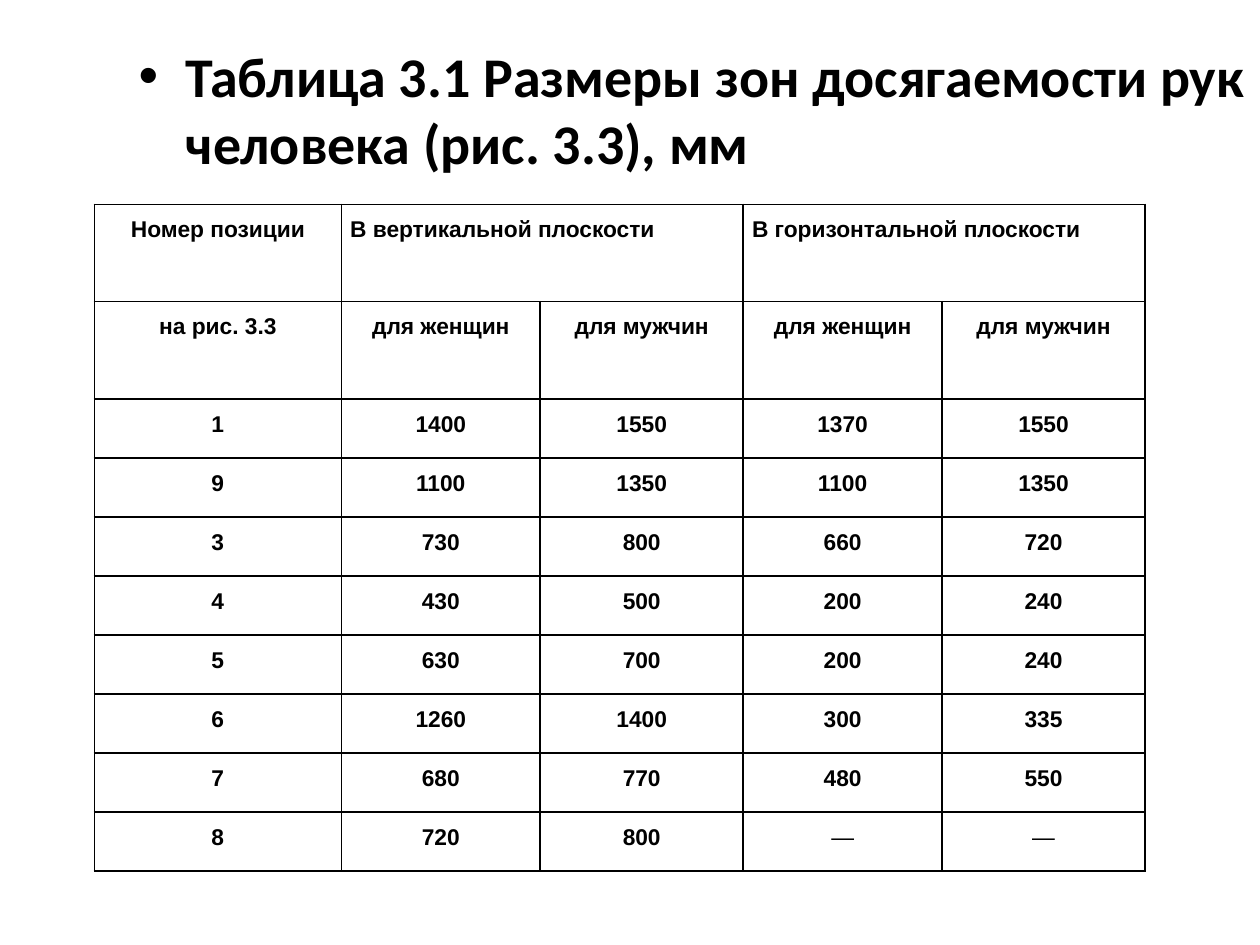
"""Build a slide with a table of arm reach zones."""
from lxml import etree
from pptx import Presentation
from pptx.dml.color import RGBColor
from pptx.enum.text import PP_ALIGN
from pptx.oxml.ns import qn
from pptx.util import Cm, Pt

LEFT, CENTER = PP_ALIGN.LEFT, PP_ALIGN.CENTER
BLACK = RGBColor(0, 0, 0)
WHITE = RGBColor(255, 255, 255)

TITLE = "Таблица 3.1 Размеры зон досягаемости рук человека (рис. 3.3), мм"
DASH = "—"
HEADS = [
    ["Номер позиции", "В вертикальной плоскости", "", "В горизонтальной плоскости", ""],
    ["на рис. 3.3"] + ["для женщин", "для мужчин"] * 2,
]
ZONES = [
    [1, 1400, 1550, 1370, 1550],
    [9, 1100, 1350, 1100, 1350],
    [3, 730, 800, 660, 720],
    [4, 430, 500, 200, 240],
    [5, 630, 700, 200, 240],
    [6, 1260, 1400, 300, 335],
    [7, 680, 770, 480, 550],
    [8, 720, 800, DASH, DASH],
]
SPANS = [(0, 1), (0, 3)]
WIDTHS = [4.98] + [4.01, 4.09] * 2
HEIGHTS = [1.96] * len(HEADS) + [1.19] * len(ZONES)


def assign(item, values):
    """Set each named attribute of an item."""
    for name, value in values.items():
        setattr(item, name, value)


class Page:
    """Style and current slide, with a method for each kind of element."""

    head = {"name": "Calibri", "size": Pt(32), "bold": True}
    body = {"name": "Arial", "size": Pt(13), "bold": True}
    inset = {f"margin_{side}": Cm(0.18) for side in ("left", "right", "top", "bottom")}
    plain = {"first_row": False, "horz_banding": False}

    def __init__(self, deck):
        """Add a slide that keeps only its body placeholder."""
        self.slide = deck.slides.add_slide(deck.slide_layouts[1])
        title = self.slide.shapes.title.element
        title.getparent().remove(title)

    def label(self, para, text, font):
        """Put styled text in a paragraph."""
        run = para.add_run()
        run.text = text
        assign(run.font, font)
        run.font.color.rgb = BLACK

    def bullet(self, text, left, top, width, height):
        """Place the body placeholder and fill it."""
        box = self.slide.placeholders[1]
        assign(box, {"left": Cm(left), "top": Cm(top),
                     "width": Cm(width), "height": Cm(height)})
        self.label(box.text_frame.paragraphs[0], text, self.head)

    def border(self, cell):
        """Draw a thin line on all sides of a cell."""
        props = cell._tc.get_or_add_tcPr()
        for side in ("lnL", "lnR", "lnT", "lnB"):
            line = etree.SubElement(props, qn(f"a:{side}"), w=str(Pt(1)))
            fill = etree.SubElement(line, qn("a:solidFill"))
            etree.SubElement(fill, qn("a:srgbClr"), val=str(BLACK))

    def cell(self, cell, text, align):
        """Format one cell and set its text."""
        self.border(cell)
        cell.fill.solid()
        cell.fill.fore_color.rgb = WHITE
        assign(cell, self.inset)
        para = cell.text_frame.paragraphs[0]
        assign(para, {"alignment": align, "line_spacing": 1.15})
        if text:
            self.label(para, text, {**self.body, "bold": text != DASH})

    def table(self, rows, left, top):
        """Add the table with its merged heads."""
        grid = self.slide.shapes.add_table(
            len(rows), len(WIDTHS), Cm(left), Cm(top),
            Cm(sum(WIDTHS)), Cm(sum(HEIGHTS))).table
        assign(grid, self.plain)
        for col, width in zip(grid.columns, WIDTHS):
            col.width = Cm(width)
        for row, height in zip(grid.rows, HEIGHTS):
            row.height = Cm(height)
        for r, row in enumerate(rows):
            for c, value in enumerate(row):
                align = LEFT if (r, c) in SPANS else CENTER
                self.cell(grid.cell(r, c), str(value), align)
        for r, c in SPANS:
            grid.cell(r, c).merge(grid.cell(r, c + 1))


def main():
    """Build and save the deck."""
    deck = Presentation()
    assign(deck, {"slide_width": Cm(25.4), "slide_height": Cm(19.05)})
    page = Page(deck)
    page.bullet(TITLE, 2.54, 0.71, 22.86, 2.87)
    page.table(HEADS + ZONES, 1.9, 4.12)
    deck.save("out.pptx")


if __name__ == "__main__":
    main()
